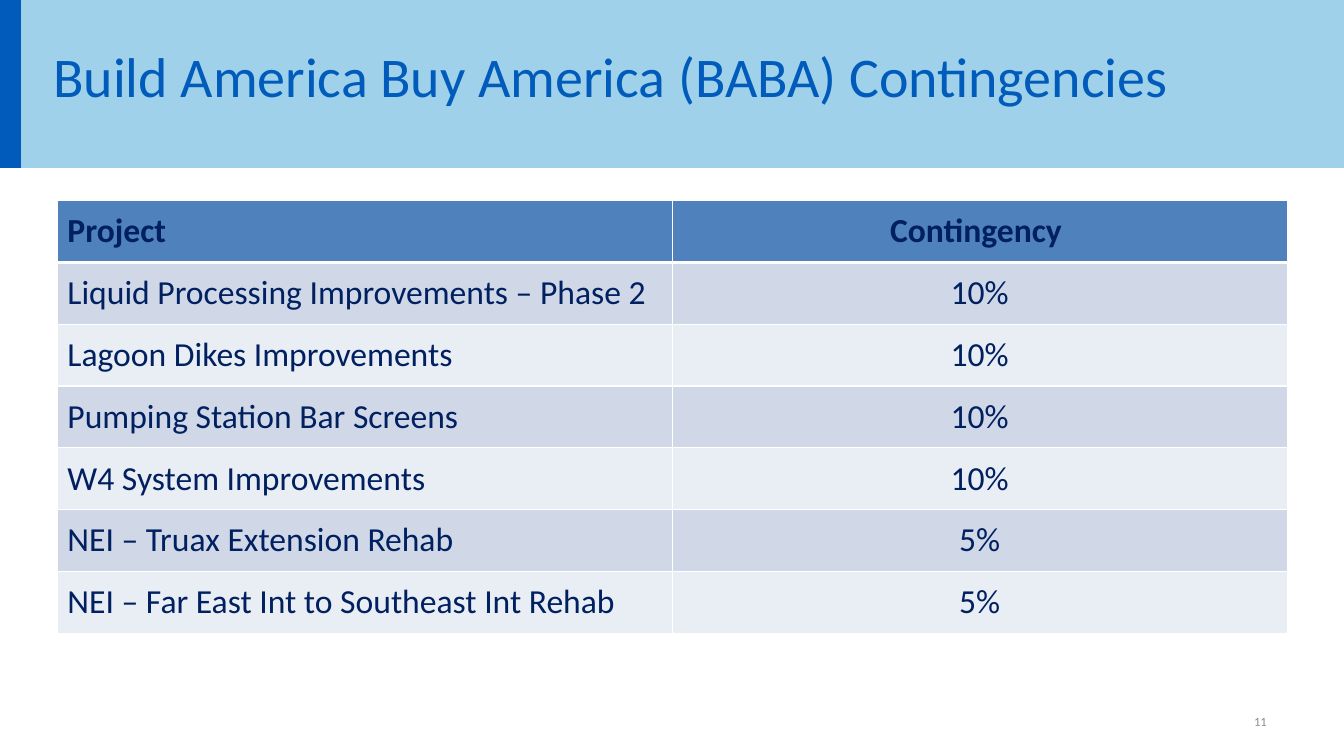
from lxml import etree
from pptx import Presentation
from pptx.dml.color import RGBColor
from pptx.enum.shapes import MSO_SHAPE as Shape
from pptx.enum.text import MSO_ANCHOR as Anchor, PP_ALIGN as Align
from pptx.oxml.ns import qn
from pptx.util import Pt

FONT = "Calibri"
SKY = RGBColor(0x8F, 0xCA, 0xE7)
BLUE = RGBColor(0x00, 0x5B, 0xBB)
NAVY = RGBColor(0x00, 0x20, 0x60)
GRAY = RGBColor(0x8C, 0x8C, 0x8C)
WHITE = RGBColor(0xFF, 0xFF, 0xFF)
HEADER_FILL = RGBColor(0x4F, 0x81, 0xBD)
BAND_FILLS = [RGBColor(0xD0, 0xD8, 0xE8), RGBColor(0xE9, 0xED, 0xF4)]

CONTINGENCIES = [
    ("Project", "Contingency "),
    ("Liquid Processing Improvements – Phase 2", "10%"),
    ("Lagoon Dikes Improvements", "10%"),
    ("Pumping Station Bar Screens", "10%"),
    ("W4 System Improvements", "10%"),
    ("NEI – Truax Extension Rehab", "5%"),
    ("NEI – Far East Int to Southeast Int Rehab", "5%"),
]


def write(frame, text, size, color, align=Align.LEFT, bold=False):
    frame.text = text
    paragraph = frame.paragraphs[0]
    paragraph.alignment = align
    font = paragraph.runs[0].font
    font.name, font.size, font.bold = FONT, Pt(size), bold
    font.color.rgb = color


def add_label(slide, box, text, size, color, align=Align.LEFT):
    frame = slide.shapes.add_textbox(*map(Pt, box)).text_frame
    frame.word_wrap = True
    frame.vertical_anchor = Anchor.MIDDLE
    write(frame, text, size, color, align)


def add_block(slide, box, color):
    block = slide.shapes.add_shape(Shape.RECTANGLE, *map(Pt, box))
    block.shadow.inherit = False
    block.fill.solid()
    block.fill.fore_color.rgb = color
    block.line.fill.background()
    return block


def set_borders(cell, bottom_width):
    properties = cell._tc.get_or_add_tcPr()
    widths = {"a:lnL": 1, "a:lnR": 1, "a:lnT": 1, "a:lnB": bottom_width}
    for position, (side, width) in enumerate(widths.items()):
        border = etree.Element(qn(side), w=str(Pt(width)))
        fill = etree.SubElement(border, qn("a:solidFill"))
        etree.SubElement(fill, qn("a:srgbClr"), val=str(WHITE))
        properties.insert(position, border)


def add_title_band(slide, box, title):
    left, top, width, height = box
    band = add_block(slide, box, SKY)
    tint = band._element.spPr.find(".//" + qn("a:srgbClr"))
    etree.SubElement(tint, qn("a:alpha"), val="85000")
    add_block(slide, (left, top, 15, height), BLUE)
    add_label(slide, (left + 31, top + 23, width - 79, 61), title, 40, BLUE)


def add_contingency_table(slide, box, rows):
    table = slide.shapes.add_table(len(rows), len(rows[0]), *map(Pt, box)).table
    for row_index, row in enumerate(rows):
        header = row_index == 0
        for column_index, text in enumerate(row):
            cell = table.cell(row_index, column_index)
            cell.vertical_anchor = Anchor.MIDDLE
            cell.fill.solid()
            cell.fill.fore_color.rgb = HEADER_FILL if header else BAND_FILLS[(row_index - 1) % 2]
            set_borders(cell, 3 if header else 1)
            align = Align.CENTER if column_index else Align.LEFT
            write(cell.text_frame, text, 24, NAVY, align, header)


def main():
    deck = Presentation()
    deck.slide_width, deck.slide_height = Pt(960), Pt(540)
    slide = deck.slides.add_slide(deck.slide_layouts[6])
    add_title_band(slide, (0, 0, 960, 120), "Build America Buy America (BABA) Contingencies")
    add_label(slide, (688, 500.5, 224, 29), "11", 9, GRAY, Align.RIGHT)
    add_contingency_table(slide, (41, 143.3, 878.4, 309), CONTINGENCIES)
    deck.save("out.pptx")


if __name__ == "__main__":
    main()
